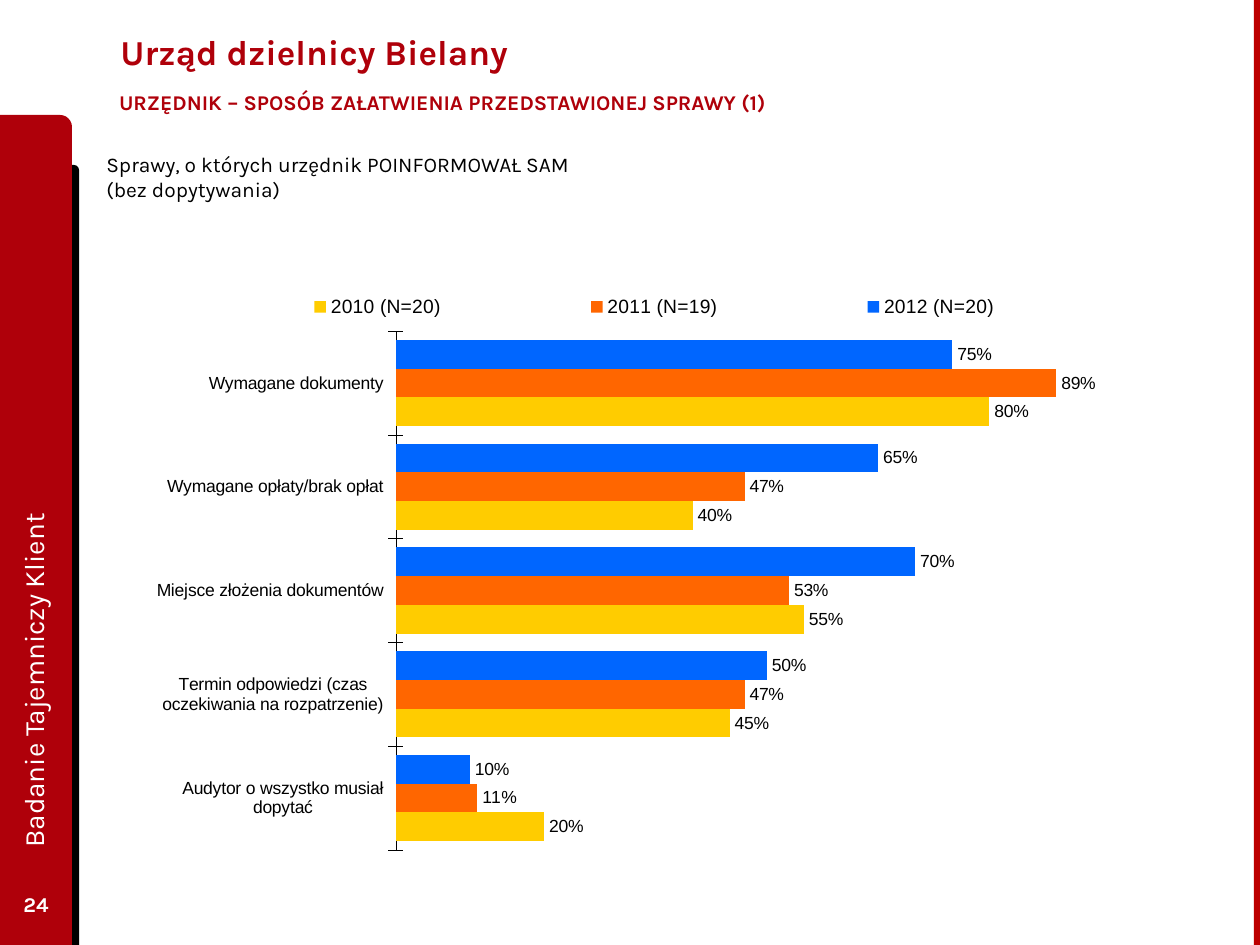
from lxml.etree import SubElement
from pptx import Presentation
from pptx.chart.data import CategoryChartData
from pptx.dml.color import RGBColor
from pptx.enum.chart import XL_CHART_TYPE, XL_LABEL_POSITION, XL_LEGEND_POSITION, XL_TICK_MARK
from pptx.enum.shapes import MSO_SHAPE
from pptx.enum.text import MSO_ANCHOR, PP_ALIGN
from pptx.oxml.ns import qn
from pptx.util import Emu, Pt

SCALE = 914400 / 126
PAGE_WIDTH, PAGE_HEIGHT = 1260, 945
RED, BLACK, WHITE = "AF000A", "000000", "FFFFFF"

CATEGORIES = [
    "Wymagane dokumenty",
    "Wymagane opłaty/brak opłat",
    "Miejsce złożenia dokumentów",
    "Termin odpowiedzi (czas oczekiwania na rozpatrzenie)",
    "Audytor o wszystko musiał dopytać",
]
SERIES = [
    ("2012 (N=20)", "0066FF", [0.75, 0.65, 0.7, 0.5, 0.1]),
    ("2011 (N=19)", "FF6600", [0.89, 0.47, 0.53, 0.47, 0.11]),
    ("2010 (N=20)", "FFCC00", [0.8, 0.4, 0.55, 0.45, 0.2]),
]


def px(length):
    return Emu(round(length * SCALE))


def color(value):
    return RGBColor.from_string(value)


def set_font(font, name, size, fill, bold=False):
    font.name, font.size, font.bold = name, Pt(size), bold
    font.color.rgb = color(fill)


def add_block(page, kind, left, top, width, height, fill):
    block = page.shapes.add_shape(kind, px(left), px(top), px(width), px(height))
    block.shadow.inherit = False
    block.fill.solid()
    block.fill.fore_color.rgb = color(fill)
    block.line.fill.background()


def add_text(page, text, left, top, width, height, size, fill, bold=False,
             anchor=MSO_ANCHOR.TOP, align=PP_ALIGN.LEFT):
    box = page.shapes.add_textbox(px(left), px(top), px(width), px(height))
    frame = box.text_frame
    frame.word_wrap = True
    frame.vertical_anchor = anchor
    para = frame.paragraphs[0]
    para.text = text
    para.alignment = align
    set_font(para.font, "Karla", size, fill, bold)
    return box


def add_sidebar(page, left, top, width):
    """Red tab with its black edge, the rotated survey name and the page number."""
    height = PAGE_HEIGHT - top
    add_block(page, MSO_SHAPE.ROUND_1_RECTANGLE, left + 49, top + 50, 30, height - 50, BLACK)
    add_block(page, MSO_SHAPE.ROUND_1_RECTANGLE, left, top, width, height, RED)
    add_text(page, "24", left, top + 764, width, 50, 12, WHITE, True,
             MSO_ANCHOR.MIDDLE, PP_ALIGN.CENTER)
    survey = add_text(page, "Badanie Tajemniczy Klient", left - 330, top + 350, 726, 64,
                      16, WHITE, anchor=MSO_ANCHOR.MIDDLE)
    survey.rotation = 270


def add_heading(page, left, top):
    add_text(page, "Urząd dzielnicy Bielany", left + 14, top, 979, 91, 20, RED, True,
             MSO_ANCHOR.MIDDLE)
    subtitle = add_text(page, "URZĘDNIK – SPOSÓB ZAŁATWIENIA PRZEDSTAWIONEJ SPRAWY (1)",
                        left, top + 77, 710, 42, 12, RED, True)
    subtitle.text_frame.margin_left = subtitle.text_frame.margin_right = px(25)
    add_text(page, "Sprawy, o których urzędnik POINFORMOWAŁ SAM (bez dopytywania)",
             left, top + 139, 515, 63, 12, BLACK)


def set_layout(part, left, top, width, height, inner=False):
    """Place a chart part by fractions of the chart box."""
    for old in part.findall(qn("c:layout")):
        part.remove(old)
    layout = SubElement(part, qn("c:layout"))
    manual = SubElement(layout, qn("c:manualLayout"))
    settings = [("layoutTarget", "inner")] if inner else []
    settings += [("xMode", "edge"), ("yMode", "edge"),
                 ("x", left), ("y", top), ("w", width), ("h", height)]
    for tag, value in settings:
        SubElement(manual, qn(f"c:{tag}")).set("val", str(value))
    part.remove(layout)
    part.insert(0 if inner else 1, layout)


def style_axes(chart):
    category_axis, value_axis = chart.category_axis, chart.value_axis
    category_axis.reverse_order = True
    category_axis.major_tick_mark = XL_TICK_MARK.CROSS
    category_axis.format.line.color.rgb = color(BLACK)
    category_axis.format.line.width = Pt(0.25)
    set_font(category_axis.tick_labels.font, "Arial", 10, BLACK)
    value_axis.minimum_scale, value_axis.maximum_scale = 0, 1
    value_axis.major_unit = 0.2
    value_axis.has_major_gridlines = False
    value_axis.visible = False


def style_series(series, fill):
    series.format.fill.solid()
    series.format.fill.fore_color.rgb = color(fill)
    labels = series.data_labels
    labels.show_value = True
    labels.number_format, labels.number_format_is_linked = "0%", False
    labels.position = XL_LABEL_POSITION.OUTSIDE_END
    set_font(labels.font, "Arial", 10, BLACK)


def add_bar_chart(page, left, top, width, height):
    data = CategoryChartData(number_format="0%")
    data.categories = CATEGORIES
    for name, _, values in SERIES:
        data.add_series(name, values)
    chart = page.shapes.add_chart(XL_CHART_TYPE.BAR_CLUSTERED, px(left), px(top),
                                  px(width), px(height), data).chart
    chart.has_title = False
    set_font(chart.font, "Arial", 9.8, BLACK)
    plot = chart.plots[0]
    plot.gap_width, plot.overlap = 60, 0
    plot.vary_by_categories = False
    for series, (_, fill, _) in zip(plot.series, SERIES):
        style_series(series, fill)
    style_axes(chart)
    chart.has_legend = True
    legend = chart.legend
    legend.position = XL_LEGEND_POSITION.RIGHT
    legend.include_in_layout = False
    set_font(legend.font, "Arial", 11, BLACK)
    set_layout(chart.element.find(f".//{qn('c:legend')}"), 0.02, 0, 0.98, 0.08)
    set_layout(chart.element.find(f".//{qn('c:plotArea')}"), 0.249, 0.083, 0.752, 0.91, True)


def main():
    deck = Presentation()
    deck.slide_width, deck.slide_height = px(PAGE_WIDTH), px(PAGE_HEIGHT)
    page = deck.slides.add_slide(deck.slide_layouts[6])
    add_sidebar(page, 0, 115, 72)
    add_block(page, MSO_SHAPE.RECTANGLE, PAGE_WIDTH - 6, 0, 6, PAGE_HEIGHT, "BD0000")
    add_heading(page, 94, 6)
    add_bar_chart(page, 151, 284, 987, 570)
    deck.save("out.pptx")


if __name__ == "__main__":
    main()
